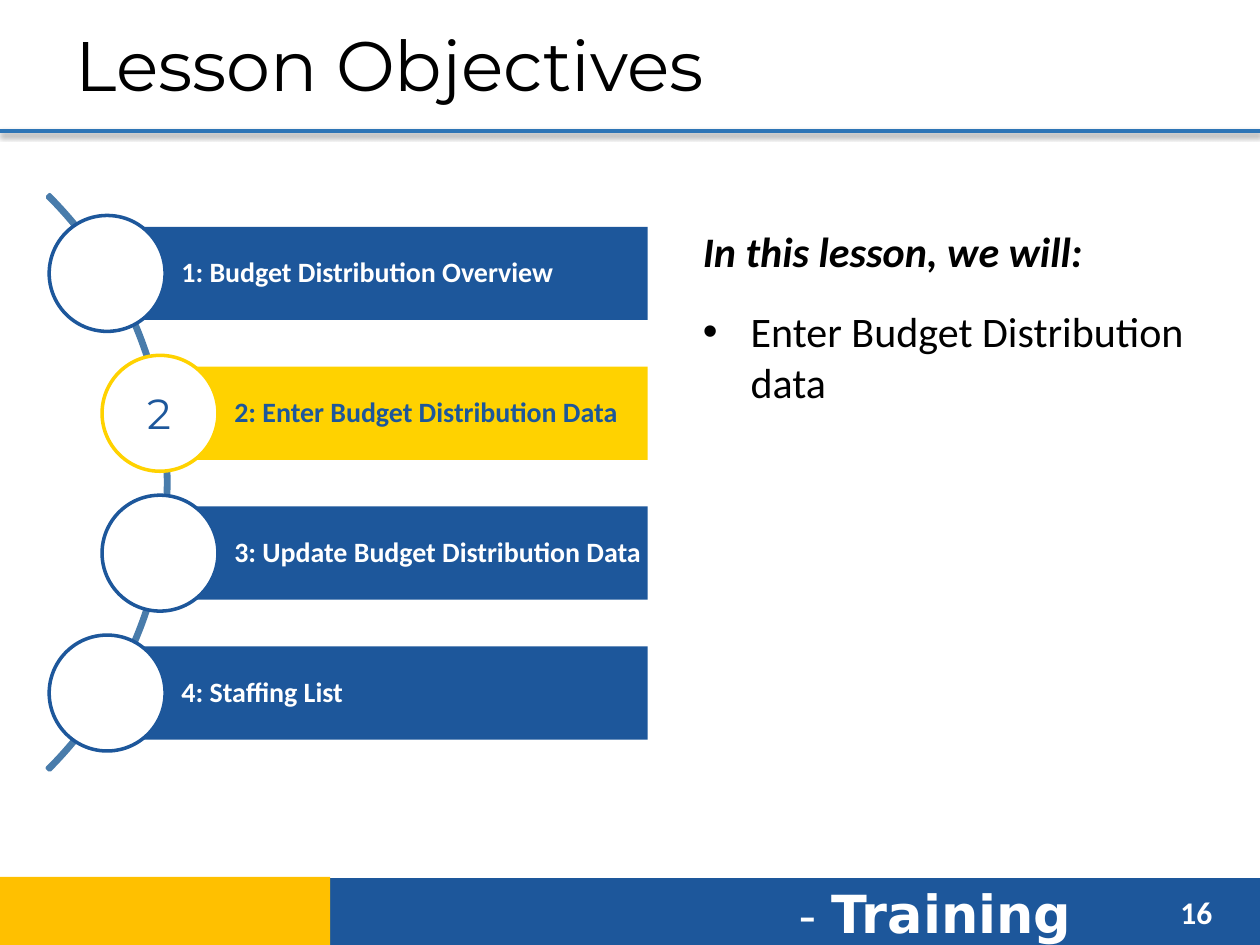
"""Build the Lesson Objectives slide with its four-step curved agenda."""
from dataclasses import dataclass

from lxml import etree
from pptx import Presentation, util as u
from pptx.dml.color import RGBColor
from pptx.enum import shapes, text
from pptx.oxml import parse_xml
from pptx.oxml.ns import nsdecls, qn
from pptx.slide import Slide

COLORS = {
    "blue": "1D579B", "yellow": "FFD200", "amber": "FFC000", "arc": "497CAB",
    "rule": "2E75B6", "white": "FFFFFF", "black": "000000",
}
SHAPE = shapes.MSO_SHAPE
LEFT = text.PP_ALIGN.LEFT
MIDDLE = text.MSO_ANCHOR.MIDDLE
BAR_RIGHT, BAR_HEIGHT, CIRCLE = 5.14, 0.74, 0.92
FIRST_CENTER, STEP_PITCH = 2.17, 1.11


@dataclass
class Step:
    label: str
    center: float
    fill: str = "blue"
    color: str = "white"


STEPS = [
    Step("1: Budget Distribution Overview", 0.85),
    Step("2: Enter Budget Distribution Data", 1.27, "yellow", "blue"),
    Step("3: Update Budget Distribution Data", 1.27),
    Step("4: Staffing List", 0.85),
]


def rgb(name: str) -> RGBColor:
    return RGBColor.from_string(COLORS[name])


def apply(target, values: dict) -> None:
    for name, value in values.items():
        setattr(target, name, value)


def add_span(para, words: str, size: float, color: str, face: str = "Calibri", **style) -> None:
    span = para.add_run()
    span.text = words
    apply(span.font, {"size": u.Pt(size), "name": face, **style})
    span.font.color.rgb = rgb(color)


def add_shape(slide: Slide, kind, place: tuple, fill: str | None = None,
              line: str | None = None):
    shape = slide.shapes.add_shape(kind, *map(u.Inches, place))
    shape.shadow.inherit = False
    if fill:
        shape.fill.solid()
        shape.fill.fore_color.rgb = rgb(fill)
    else:
        shape.fill.background()
    if line:
        shape.line.color.rgb = rgb(line)
        shape.line.width = u.Pt(2)
    else:
        shape.line.fill.background()
    return shape


def add_box(slide: Slide, place: tuple, **frame_format):
    frame = slide.shapes.add_textbox(*map(u.Inches, place)).text_frame
    apply(frame, {"word_wrap": True, **frame_format})
    return frame


def add_header(slide: Slide) -> None:
    title = slide.shapes.title
    apply(title, dict(zip(("left", "top", "width", "height"),
                          map(u.Inches, (0.5, 0.04, 9, 0.93)))))
    title.text_frame.vertical_anchor = MIDDLE
    para = title.text_frame.paragraphs[0]
    para.alignment = LEFT
    add_span(para, "Lesson Objectives", 40, "black", "Montserrat")

    rule = slide.shapes.add_connector(
        shapes.MSO_CONNECTOR.STRAIGHT, *map(u.Inches, (0, 1.04, 10, 1.04)))
    rule.line.color.rgb = rgb("rule")
    rule.line.width = u.Pt(2.25)
    rule.element.spPr.append(parse_xml(
        f'<a:effectLst {nsdecls("a")}>'
        '<a:outerShdw blurRad="39400" dist="20300" dir="5400000" rotWithShape="0">'
        f'<a:srgbClr val="{COLORS["black"]}"><a:alpha val="38000"/></a:srgbClr>'
        '</a:outerShdw></a:effectLst>'))


def add_footer(slide: Slide) -> None:
    add_shape(slide, SHAPE.RECTANGLE, (2.61, 6.97, 7.39, 0.55), "blue")
    add_shape(slide, SHAPE.RECTANGLE, (-0.01, 6.96, 2.63, 0.55), "amber")
    para = add_box(slide, (6.24, 6.94, 2.8, 0.61)).paragraphs[0]
    add_span(para, "- ", 28, "white", "DejaVu Sans")
    add_span(para, "Training", 30, "white", "DejaVu Sans", bold=True)
    number = add_box(slide, (9.27, 7.04, 0.6, 0.4)).paragraphs[0]
    add_span(number, "16", 18, "white", bold=True)


def add_step(slide: Slide, step: Step, middle: float) -> None:
    bar = add_shape(slide, SHAPE.RECTANGLE,
                    (step.center, middle - BAR_HEIGHT / 2, BAR_RIGHT - step.center, BAR_HEIGHT),
                    step.fill)
    margin = u.Inches(0.04)
    apply(bar.text_frame, {
        "margin_left": u.Inches(0.59), "margin_right": margin, "margin_top": margin,
        "margin_bottom": margin, "word_wrap": True, "vertical_anchor": MIDDLE})
    para = bar.text_frame.paragraphs[0]
    apply(para, {"alignment": LEFT, "line_spacing": 0.9})
    add_span(para, step.label, 16, step.color, bold=True)
    add_shape(slide, SHAPE.OVAL,
              (step.center - CIRCLE / 2, middle - CIRCLE / 2, CIRCLE, CIRCLE),
              "white", step.fill)


def add_agenda(slide: Slide) -> None:
    arc = add_shape(slide, SHAPE.BLOCK_ARC, (-5.12, 0.6, 6.46, 6.46), line="arc")
    for index, value in enumerate((189, 27, 0.004)):
        arc.adjustments[index] = value
    for index, step in enumerate(STEPS):
        add_step(slide, step, FIRST_CENTER + index * STEP_PITCH)
    current = add_box(slide, (1.07, 3.03, 0.58, 0.5)).paragraphs[0]
    add_span(current, "2", 24, "blue", "Montserrat")


def add_objectives(slide: Slide) -> None:
    frame = add_box(slide, (5.48, 1.43, 4.37, 5.25), margin_top=u.Inches(0.36))
    add_span(frame.paragraphs[0], "In this lesson, we will:", 24, "black", bold=True, italic=True)
    para = frame.add_paragraph()
    para.space_before = u.Pt(17)
    properties = para._p.get_or_add_pPr()
    properties.set("marL", str(u.Inches(0.38)))
    properties.set("indent", str(u.Inches(-0.38)))
    etree.SubElement(properties, qn("a:buFont"), typeface="Arial")
    etree.SubElement(properties, qn("a:buChar"), char="•")
    add_span(para, "Enter Budget Distribution data", 24, "black")


def main() -> None:
    deck = Presentation()
    deck.slide_width, deck.slide_height = u.Inches(10), u.Inches(7.5)
    slide = deck.slides.add_slide(deck.slide_layouts[5])
    add_header(slide)
    add_footer(slide)
    add_objectives(slide)
    add_agenda(slide)
    deck.save("out.pptx")


if __name__ == "__main__":
    main()
